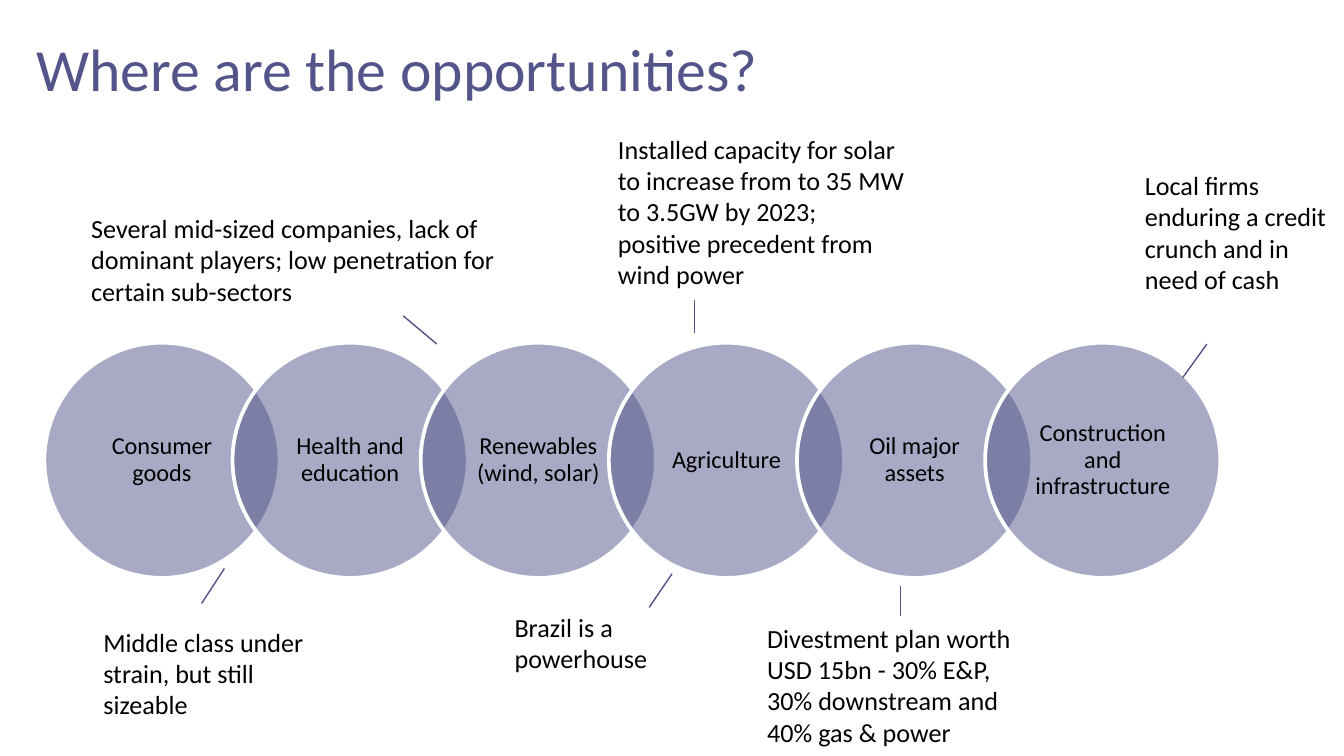
from lxml import etree
from pptx import Presentation
from pptx.dml.color import RGBColor
from pptx.enum import shapes, text
from pptx.oxml import ns
from pptx.util import Inches, Pt

PURPLE = RGBColor(0x53, 0x54, 0x8A)
LINE_PURPLE = RGBColor(0x50, 0x51, 0x88)
BLACK = RGBColor(0, 0, 0)
WHITE = RGBColor(255, 255, 255)

TITLE_FONT = {"name": "Calibri", "size": Pt(32)}
SECTOR_FONT = {"name": "Calibri", "size": Pt(13)}
NOTE_FONT = {"name": "Calibri", "size": Pt(14)}

# Widescreen page
PAGE_WIDTH = 10
PAGE_HEIGHT = PAGE_WIDTH * 9 / 16

# Chain of overlapping circles
CHAIN_LEFT, CHAIN_TOP = 0.33, 2.55
DIAMETER, STEP = 1.75, 1.4
LABEL_INSET = 0.26
SECTORS = [
    "Consumer goods",
    "Health and education",
    "Renewables (wind, solar)",
    "Agriculture",
    "Oil major assets",
    "Construction and infrastructure",
]

# Comments: left, top, width, height, wording
COMMENTS = [
    (0.58, 1.53, 3.33, 0.81, "Several mid-sized companies, lack of dominant players; "
                             "low penetration for certain sub-sectors"),
    (4.5, 0.94, 2.33, 1.29, "Installed capacity for solar to increase from to 35 MW "
                            "to 3.5GW by 2023; positive precedent from wind power"),
    (5.61, 4.58, 2.17, 1.04, "Divestment plan worth USD 15bn - 30% E&P, "
                             "30% downstream and 40% gas & power"),
    (8.42, 1.21, 1.67, 1.04, "Local firms enduring a credit crunch and in need of cash"),
    (0.67, 4.61, 1.89, 1.04, "Middle class under strain, but still sizeable"),
    (3.73, 4.5, 1.89, 0.81, "Brazil is a powerhouse"),
]

# Pointers: start x, start y, end x, end y
POINTERS = [
    (5.17, 2.48, 5.17, 2.23),
    (3.25, 2.56, 3, 2.35),
    (6.7, 4.36, 6.7, 4.58),
    (8.8, 2.81, 8.98, 2.56),
    (1.5, 4.49, 1.67, 4.23),
    (4.83, 4.52, 5, 4.27),
]


def apply(target, values):
    for name, value in values.items():
        setattr(target, name, value)


def write(frame, wording, font, color, **para_format):
    para = frame.paragraphs[0]
    apply(para, para_format)
    span = para.add_run()
    span.text = wording
    apply(span.font, font)
    span.font.color.rgb = color


def add_title(page, wording):
    title = page.shapes.title
    apply(title, {"left": Inches(0.17), "top": Inches(0.15),
                  "width": Inches(9.25), "height": Inches(0.71)})
    title.text_frame.vertical_anchor = text.MSO_ANCHOR.MIDDLE
    write(title.text_frame, wording, TITLE_FONT, PURPLE,
          alignment=text.PP_ALIGN.LEFT)


def add_text(page, left, top, width, height, wording, font, frame_format, **para_format):
    box = page.shapes.add_textbox(*map(Inches, (left, top, width, height)))
    apply(box.text_frame, {"word_wrap": True, **frame_format})
    write(box.text_frame, wording, font, BLACK, **para_format)


def add_sector(page, left, wording):
    circle = page.shapes.add_shape(
        shapes.MSO_SHAPE.OVAL, Inches(left), Inches(CHAIN_TOP),
        Inches(DIAMETER), Inches(DIAMETER))
    circle.shadow.inherit = False
    circle.fill.solid()
    circle.fill.fore_color.rgb = PURPLE
    # Half transparent, so that overlaps look darker
    color = circle.fill._xPr.find(ns.qn("a:solidFill"))[0]
    etree.SubElement(color, ns.qn("a:alpha"), val="50000")
    circle.line.color.rgb = WHITE
    circle.line.width = Pt(2)

    side = DIAMETER - 2 * LABEL_INSET
    frame_format = {
        "vertical_anchor": text.MSO_ANCHOR.MIDDLE,
        "margin_left": Inches(0.1), "margin_right": Inches(0.1),
        "margin_top": Inches(0.02), "margin_bottom": Inches(0.02),
    }
    add_text(page, left + LABEL_INSET, CHAIN_TOP + LABEL_INSET, side, side,
             wording, SECTOR_FONT, frame_format,
             alignment=text.PP_ALIGN.CENTER, line_spacing=0.9)


def add_pointer(page, *ends):
    pointer = page.shapes.add_connector(
        shapes.MSO_CONNECTOR.STRAIGHT, *map(Inches, ends))
    pointer.line.color.rgb = LINE_PURPLE
    pointer.line.width = Pt(0.75)
    etree.SubElement(pointer._element.spPr, ns.qn("a:effectLst"))


def main():
    deck = Presentation()
    deck.slide_width, deck.slide_height = Inches(PAGE_WIDTH), Inches(PAGE_HEIGHT)
    page = deck.slides.add_slide(deck.slide_layouts.get_by_name("Title Only"))

    add_title(page, "Where are the opportunities?")
    for index, sector in enumerate(SECTORS):
        add_sector(page, CHAIN_LEFT + index * STEP, sector)
    for *place, wording in COMMENTS:
        add_text(page, *place, wording, NOTE_FONT,
                 {"auto_size": text.MSO_AUTO_SIZE.SHAPE_TO_FIT_TEXT})
    for ends in POINTERS:
        add_pointer(page, *ends)

    deck.save("out.pptx")


if __name__ == "__main__":
    main()
